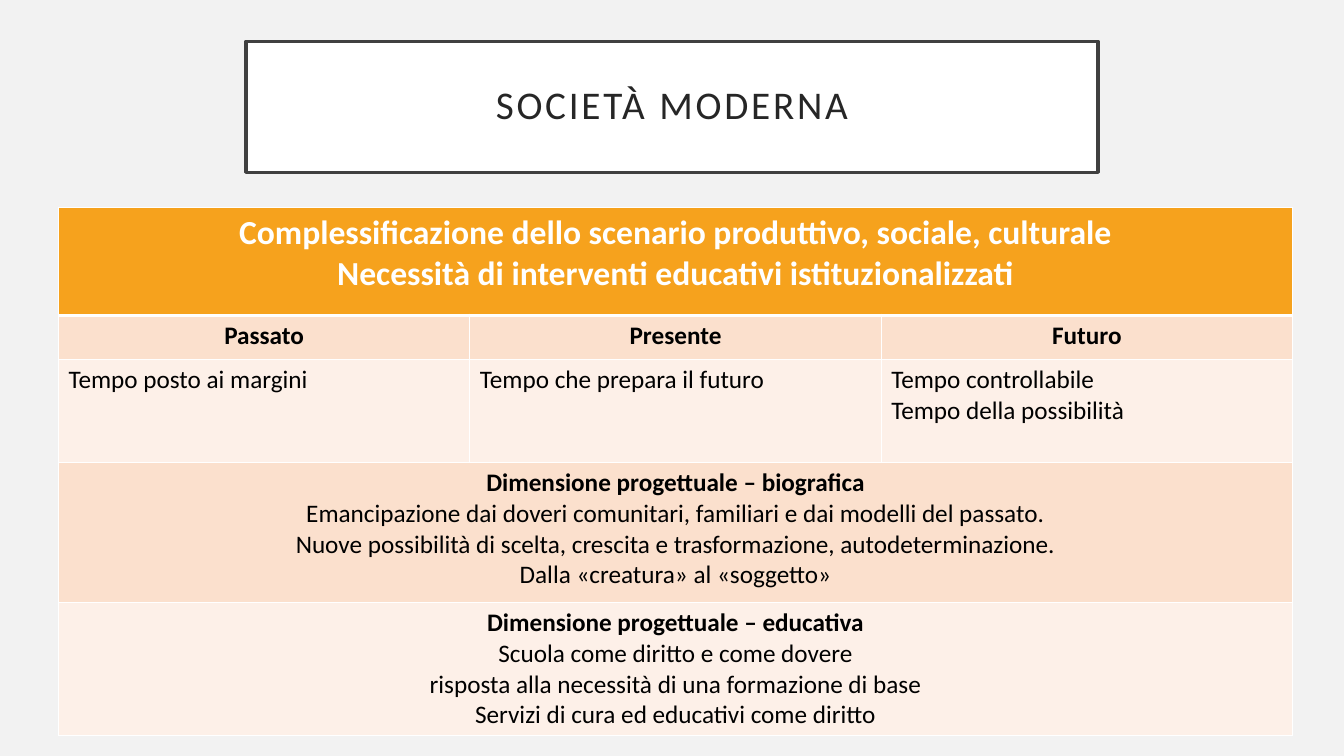
import pptx
import pptx.dml.color
import pptx.enum.shapes
import pptx.enum.text
import pptx.oxml
import pptx.oxml.ns
import pptx.util

Inches = pptx.util.Inches
Pt = pptx.util.Pt
RGBColor = pptx.dml.color.RGBColor
CENTER = pptx.enum.text.PP_ALIGN.CENTER
LEFT = pptx.enum.text.PP_ALIGN.LEFT

BACKGROUND = RGBColor(0xF2, 0xF2, 0xF2)
WHITE = RGBColor(0xFF, 0xFF, 0xFF)
BLACK = RGBColor(0x00, 0x00, 0x00)
FRAME = RGBColor(0x40, 0x40, 0x40)
TITLE_TEXT = RGBColor(0x26, 0x26, 0x26)
ORANGE = RGBColor(0xF6, 0xA2, 0x1D)
PEACH = RGBColor(0xFB, 0xE0, 0xCD)
PALE_PEACH = RGBColor(0xFD, 0xF0, 0xE8)

COLUMN_WIDTH = 4.08
ROW_HEIGHTS = [1.07, 0.44, 1.02, 1.39, 1.32]


class SlideBuilder:
    """Holds the text style and the current slide."""

    font_name = "Calibri"

    def __init__(self, slide):
        self.slide = slide
        slide.background.fill.solid()
        slide.background.fill.fore_color.rgb = BACKGROUND

    def style(self, paragraph, size, color, bold, alignment):
        paragraph.alignment = alignment
        font = paragraph.font
        font.name, font.size, font.bold = self.font_name, Pt(size), bold
        font.color.rgb = color

    def title(self, text, left, top, width, height):
        shape = self.slide.shapes.add_shape(
            pptx.enum.shapes.MSO_SHAPE.RECTANGLE,
            Inches(left), Inches(top), Inches(width), Inches(height))
        shape.shadow.inherit = False
        shape.fill.solid()
        shape.fill.fore_color.rgb = WHITE
        shape.line.color.rgb = FRAME
        shape.line.width = Pt(2.5)
        frame = shape.text_frame
        frame.word_wrap = True
        frame.vertical_anchor = pptx.enum.text.MSO_ANCHOR.MIDDLE
        frame.margin_left = frame.margin_right = Inches(0.2)
        frame.margin_top = frame.margin_bottom = Inches(0.2)
        paragraph = frame.paragraphs[0]
        run = paragraph.add_run()
        run.text = text
        run.font._element.set("spc", "200")
        paragraph.line_spacing = 0.9
        self.style(paragraph, 28, TITLE_TEXT, False, CENTER)

    def table(self, left, top, column_count):
        graphic_frame = self.slide.shapes.add_table(
            len(ROW_HEIGHTS), column_count, Inches(left), Inches(top),
            Inches(COLUMN_WIDTH * column_count), Inches(sum(ROW_HEIGHTS)))
        table = graphic_frame.table
        for column in table.columns:
            column.width = Inches(COLUMN_WIDTH)
        for row, height in zip(table.rows, ROW_HEIGHTS):
            row.height = Inches(height)
        return table

    def cell(self, cell, lines, fill, size=18, color=BLACK, bold_lines=0,
             alignment=CENTER):
        cell.fill.solid()
        cell.fill.fore_color.rgb = fill
        cell.text = "\n".join(lines)
        for index, paragraph in enumerate(cell.text_frame.paragraphs):
            self.style(paragraph, size, color, index < bold_lines, alignment)

    def borders(self, cell, bottom=1, top=1):
        properties = cell._tc.get_or_add_tcPr()
        widths = {"lnL": 1, "lnR": 1, "lnT": top, "lnB": bottom}
        for position, (tag, width) in enumerate(widths.items()):
            properties.insert(position, pptx.oxml.parse_xml(
                f'<a:{tag} {pptx.oxml.ns.nsdecls("a")} w="{Pt(width)}">'
                f'<a:solidFill><a:srgbClr val="{WHITE}"/></a:solidFill>'
                f'</a:{tag}>'))


def main():
    presentation = pptx.Presentation()
    presentation.slide_width = Inches(13.33)
    presentation.slide_height = Inches(7.5)
    builder = SlideBuilder(
        presentation.slides.add_slide(presentation.slide_layouts[6]))

    builder.title("SOCIETÀ MODERNA", 2.44, 0.41, 8.45, 1.3)

    # Table grid
    table = builder.table(0.58, 2.06, 3)
    for row in range(len(ROW_HEIGHTS)):
        for column in range(3):
            builder.borders(table.cell(row, column),
                            bottom=3 if row == 0 else 1,
                            top=3 if row == 1 else 1)
    for row in (0, 3, 4):
        table.cell(row, 0).merge(table.cell(row, 2))

    # Heading
    builder.cell(table.cell(0, 0), [
        "Complessificazione dello scenario produttivo, sociale, culturale",
        "Necessità di interventi educativi istituzionalizzati",
    ], ORANGE, size=24, color=WHITE, bold_lines=2)

    # Past, present and future
    times = [
        ("Passato", ["Tempo posto ai margini"]),
        ("Presente", ["Tempo che prepara il futuro"]),
        ("Futuro", ["Tempo controllabile", "Tempo della possibilità"]),
    ]
    for column, (name, lines) in enumerate(times):
        builder.cell(table.cell(1, column), [name], PEACH, bold_lines=1)
        builder.cell(table.cell(2, column), lines, PALE_PEACH, alignment=LEFT)

    # Dimensions
    builder.cell(table.cell(3, 0), [
        "Dimensione progettuale – biografica",
        "Emancipazione dai doveri comunitari, familiari e dai modelli del passato.",
        "Nuove possibilità di scelta, crescita e trasformazione, autodeterminazione.",
        "Dalla «creatura» al «soggetto»",
    ], PEACH, bold_lines=1)
    builder.cell(table.cell(4, 0), [
        "Dimensione progettuale – educativa",
        "Scuola come diritto e come dovere",
        "risposta alla necessità di una formazione di base",
        "Servizi di cura ed educativi come diritto",
    ], PALE_PEACH, bold_lines=1)

    presentation.save("out.pptx")


if __name__ == "__main__":
    main()
